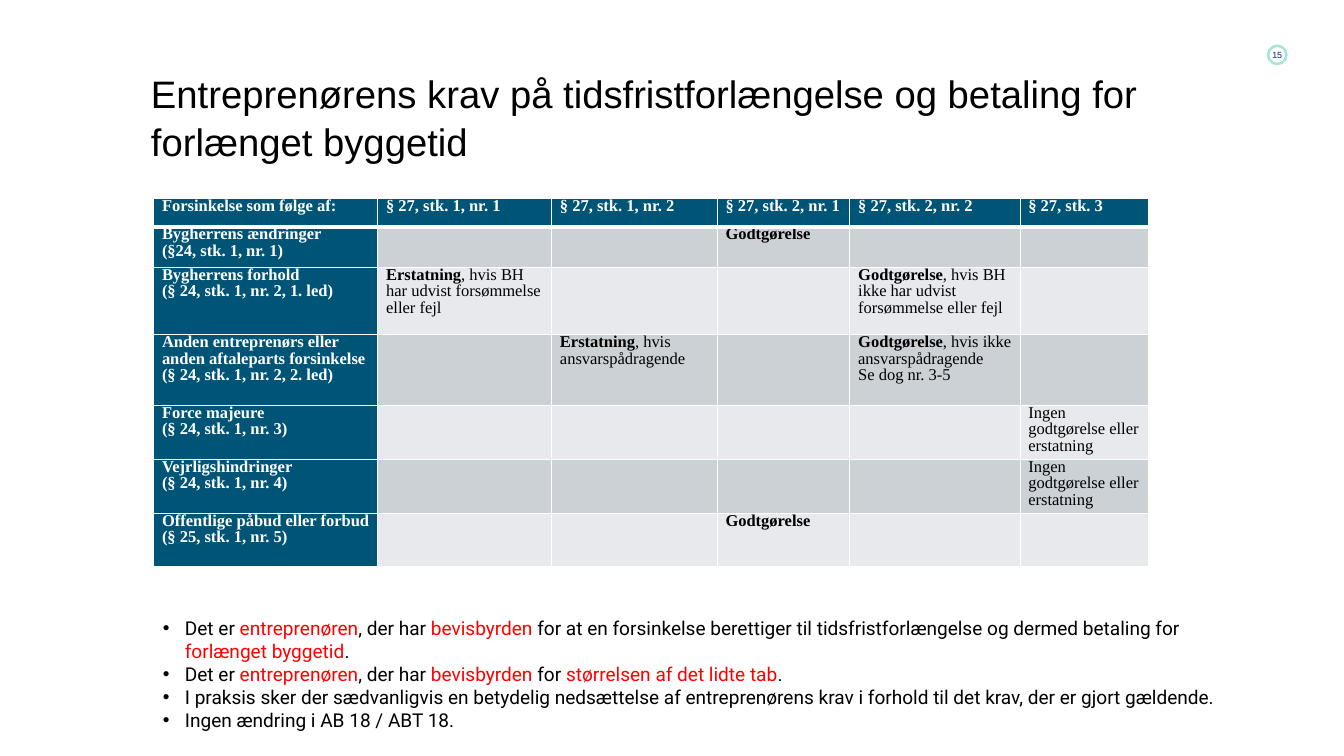
import pptx
import pptx.dml.color
import pptx.enum.shapes
import pptx.enum.text
import pptx.oxml.ns
import pptx.util
from lxml import etree

Pt = pptx.util.Pt
RGBColor = pptx.dml.color.RGBColor
qn = pptx.oxml.ns.qn

BLACK = RGBColor(0x00, 0x00, 0x00)
WHITE = RGBColor(0xFF, 0xFF, 0xFF)
RED = RGBColor(0xFF, 0x00, 0x00)
NAVY = RGBColor(0x00, 0x26, 0x77)
MINT = RGBColor(0xA7, 0xE6, 0xD7)
PETROL = RGBColor(0x00, 0x55, 0x76)
GREY = RGBColor(0xCC, 0xD1, 0xD6)
LIGHT = RGBColor(0xE7, 0xE9, 0xEC)

COLUMNS = [176.4, 136.8, 130.3, 104.4, 133.9, 100.8]
HEIGHTS = [22.3, 31.7, 53.3, 55.4, 42.5, 42.5, 41.8]
NO_CLAIM = "Ingen godtgørelse eller erstatning"
ROWS = [
    ["Forsinkelse som følge af:", "§ 27, stk. 1, nr. 1", "§ 27, stk. 1, nr. 2",
     "§ 27, stk. 2, nr. 1", "§ 27, stk. 2, nr. 2", "§ 27, stk. 3"],
    ["Bygherrens ændringer\n(§24, stk. 1, nr. 1)", "", "", "*Godtgørelse*", "", ""],
    ["Bygherrens forhold\n(§ 24, stk. 1, nr. 2, 1. led)",
     "*Erstatning*, hvis BH har udvist forsømmelse eller fejl", "", "",
     "*Godtgørelse*, hvis BH ikke har udvist forsømmelse eller fejl", ""],
    ["Anden entreprenørs eller anden aftaleparts forsinkelse\n(§ 24, stk. 1, nr. 2, 2. led)",
     "", "*Erstatning*, hvis ansvarspådragende", "",
     "*Godtgørelse*, hvis ikke ansvarspådragende\nSe dog nr. 3-5", ""],
    ["Force majeure\n(§ 24, stk. 1, nr. 3)", "", "", "", "", NO_CLAIM],
    ["Vejrligshindringer\n(§ 24, stk. 1, nr. 4)", "", "", "", "", NO_CLAIM],
    ["Offentlige påbud eller forbud\n(§ 25, stk. 1, nr. 5)", "", "", "*Godtgørelse*", "", ""],
]
BULLETS = [
    "Det er *entreprenøren*, der har *bevisbyrden* for at en forsinkelse berettiger til "
    "tidsfristforlængelse og dermed betaling for *forlænget byggetid*.",
    "Det er *entreprenøren*, der har *bevisbyrden* for *størrelsen af det lidte tab*.",
    "I praksis sker der sædvanligvis en betydelig nedsættelse af entreprenørens krav "
    "i forhold til det krav, der er gjort gældende.",
    "Ingen ændring i AB 18 / ABT 18.",
]


def set_font(font, name, size, color, bold=False):
    """Set the typeface, size, colour and weight of a font."""
    font.name = name
    font.size = Pt(size)
    font.color.rgb = color
    font.bold = bold


def add_runs(p, text, emphasise):
    """Add the text as runs and emphasise the parts between asterisks."""
    for i, part in enumerate(text.split("*")):
        if part:
            r = p.add_run()
            r.text = part
            if i % 2:
                emphasise(r.font)


def make_bold(font):
    """Make a font bold."""
    font.bold = True


def make_red(font):
    """Make a font red."""
    font.color.rgb = RED


def add_paragraphs(tf, lines):
    """Yield one paragraph of the text frame with each line."""
    for i, line in enumerate(lines):
        yield (tf.add_paragraph() if i else tf.paragraphs[0]), line


def add_textbox(s, left, top, width, height, insets):
    """Add a wrapping text box and return its text frame."""
    tf = s.shapes.add_textbox(Pt(left), Pt(top), Pt(width), Pt(height)).text_frame
    tf.word_wrap = True
    tf.margin_left, tf.margin_top, tf.margin_right, tf.margin_bottom = map(Pt, insets)
    return tf


def add_title(s, text):
    """Add the slide title."""
    p = add_textbox(s, 118.8, 39, 848.2, 78.5, (0, 14.4, 7.9, 4.3)).paragraphs[0]
    p.text = text
    p.line_spacing = 1.05
    set_font(p.font, "Arial", 30.1, BLACK)


def add_page_number(s, text):
    """Add the page number in its ring."""
    sp = s.shapes.add_shape(pptx.enum.shapes.MSO_SHAPE.OVAL, Pt(998), Pt(36), Pt(14.4), Pt(14.4))
    sp.shadow.inherit = False
    sp.fill.background()
    sp.line.color.rgb = MINT
    sp.line.width = Pt(2)
    tf = sp.text_frame
    tf.margin_left = tf.margin_top = tf.margin_right = tf.margin_bottom = 0
    tf.word_wrap = False
    tf.vertical_anchor = pptx.enum.text.MSO_ANCHOR.MIDDLE
    p = tf.paragraphs[0]
    p.text = text
    p.alignment = pptx.enum.text.PP_ALIGN.CENTER
    set_font(p.font, "Arial", 7, NAVY)


def set_borders(cell, widths):
    """Draw white borders on the left, right, top and bottom of a cell."""
    tc_pr = cell._tc.get_or_add_tcPr()
    for side, width in zip("LRTB", widths):
        ln = etree.SubElement(tc_pr, qn(f"a:ln{side}"), w=str(int(Pt(width))))
        fill = etree.SubElement(ln, qn("a:solidFill"))
        etree.SubElement(fill, qn("a:srgbClr"), val=str(WHITE))


def fill_cell(cell, text, row, is_head):
    """Write and format one table cell."""
    set_borders(cell, (1, 1, 3 if row == 1 else 1, 3 if row == 0 else 1))
    cell.fill.solid()
    cell.fill.fore_color.rgb = PETROL if is_head else GREY if row % 2 else LIGHT
    cell.margin_left = cell.margin_right = Pt(6.5)
    cell.margin_top = cell.margin_bottom = 0
    for p, line in add_paragraphs(cell.text_frame, text.split("\n")):
        p.line_spacing = Pt(13)
        set_font(p.font, "Times New Roman", 13, WHITE if is_head else BLACK, is_head)
        add_runs(p, line, make_bold)


def add_claims_table(s):
    """Add the table of claims by cause of delay."""
    table = s.shapes.add_table(len(ROWS), len(COLUMNS), Pt(121), Pt(156.2),
                               Pt(sum(COLUMNS)), Pt(sum(HEIGHTS))).table
    table.horz_banding = False
    for column, width in zip(table.columns, COLUMNS):
        column.width = Pt(width)
    for i, (height, texts) in enumerate(zip(HEIGHTS, ROWS)):
        table.rows[i].height = Pt(height)
        for j, text in enumerate(texts):
            fill_cell(table.cell(i, j), text, i, i == 0 or j == 0)


def add_bullets(s, lines):
    """Add the bulleted remarks."""
    tf = add_textbox(s, 118.8, 481, 863.3, 97, (9.4, 4.3, 9.4, 4.3))
    indent = int(Pt(17.3))
    for p, line in add_paragraphs(tf, lines):
        p_pr = p._p.get_or_add_pPr()
        p_pr.set("marL", str(indent))
        p_pr.set("indent", str(-indent))
        etree.SubElement(p_pr, qn("a:buFont"), typeface="Arial")
        etree.SubElement(p_pr, qn("a:buChar"), char="•")
        set_font(p.font, "Roboto", 15, BLACK)
        add_runs(p, line, make_red)


def main():
    """Build and save the slide."""
    prs = pptx.Presentation()
    prs.slide_width, prs.slide_height = Pt(1057.7), Pt(594.7)
    s = prs.slides.add_slide(prs.slide_layouts[6])
    add_page_number(s, "15")
    add_claims_table(s)
    add_title(s, "Entreprenørens krav på tidsfristforlængelse og betaling for forlænget byggetid")
    add_bullets(s, BULLETS)
    prs.save("out.pptx")


if __name__ == "__main__":
    main()
